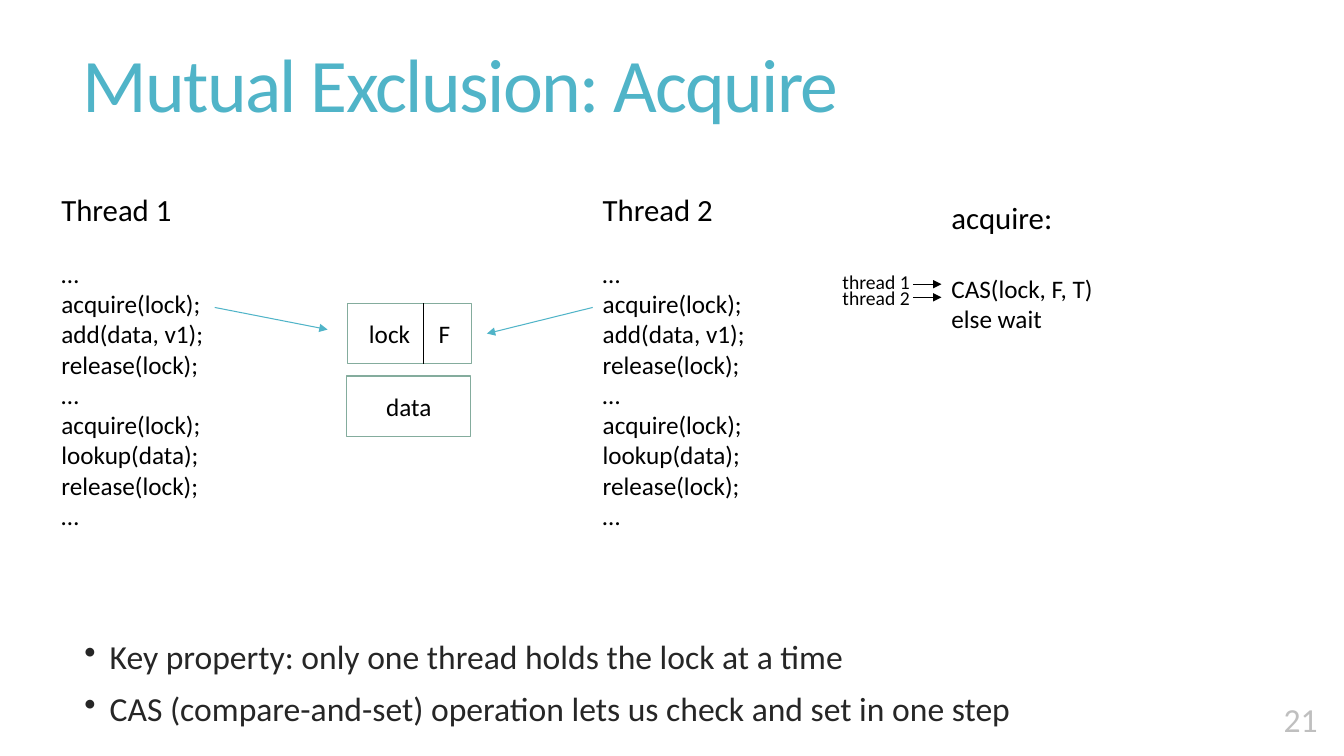
from lxml import etree
from pptx import Presentation, util as u
from pptx.dml import color
from pptx.enum import shapes, text
from pptx.oxml import ns

FONT = "Calibri"
BLACK, WHITE, TEAL, GREEN, DARK, GREY = "000000", "FFFFFF", "50B4C8", "84AC9D", "262626", "BFBFBF"
LEFT, CENTER, RIGHT = text.PP_ALIGN.LEFT, text.PP_ALIGN.CENTER, text.PP_ALIGN.RIGHT
TOP, MIDDLE, BOTTOM = text.MSO_ANCHOR.TOP, text.MSO_ANCHOR.MIDDLE, text.MSO_ANCHOR.BOTTOM

TITLE = "Mutual Exclusion: Acquire"
STEPS = ["…", "acquire(lock);", "add(data, v1);", "release(lock);",
         "…", "acquire(lock);", "lookup(data);", "release(lock);", "…"]
LISTINGS = [
    ("Thread 1", STEPS, 36.7, 132.5, 22),
    ("Thread 2", STEPS, 423.4, 132.5, 22),
    ("acquire:", ["CAS(lock, F, T)", "else wait"], 672.5, 138.2, 26.9),
]
CALLERS = [("thread 1", 189.4, 203), ("thread 2", 200.9, 212.4)]
BULLETS = ["Key property: only one thread holds the lock at a time",
           "CAS (compare-and-set) operation lets us check and set in one step"]
PAGE_NUMBER = "21"
LOCK = (248.4, 216.7, 88.6, 43.2)
DATA = (247.7, 268.6, 88.6, 43.2)
LOCK_LABELS = [("lock", 278.3), ("F", 317.4)]
LABEL_WIDTH = 36
DIVIDER = 302.4
LOCK_ARROWS = [(153.4, 219.6, 234, 235.4), (423.4, 219.6, 347.8, 238.3)]


def rgb(value):
    return color.RGBColor.from_string(value)


def write(shape, lines, size, fill=BLACK, anchor=TOP, **paragraph_format):
    frame = shape.text_frame
    frame.word_wrap = True
    frame.vertical_anchor = anchor
    frame.text = "\n".join(lines)
    for para in frame.paragraphs:
        for name, value in paragraph_format.items():
            setattr(para, name, value)
        for span in para.runs:
            for name, value in {"name": FONT, "size": u.Pt(size)}.items():
                setattr(span.font, name, value)
            span.font.color.rgb = rgb(fill)
    return frame


def add_text(page, place, lines, size, **options):
    return write(page.shapes.add_textbox(*map(u.Pt, place)), lines, size, **options)


def add_box(page, place):
    box = page.shapes.add_shape(shapes.MSO_SHAPE.RECTANGLE, *map(u.Pt, place))
    box.shadow.inherit = False
    box.fill.solid()
    box.fill.fore_color.rgb = rgb(WHITE)
    box.line.color.rgb = rgb(GREEN)
    box.line.width = u.Pt(1)
    return box


def add_line(page, ends, stroke, arrow=True):
    line = page.shapes.add_connector(shapes.MSO_CONNECTOR.STRAIGHT, *map(u.Pt, ends))
    line.line.color.rgb = rgb(stroke)
    line.line.width = u.Pt(0.75)
    if arrow:
        etree.SubElement(line.line._get_or_add_ln(), ns.qn("a:tailEnd"), type="triangle")
    etree.SubElement(line._element.spPr, ns.qn("a:effectLst"))


def add_bullets(page):
    frame = add_text(page, (53.3, 455, 846.7, 72), BULLETS, 24, fill=DARK,
                     line_spacing=0.85, space_before=u.Pt(13))
    frame.paragraphs[0].space_before = u.Pt(0)
    for para in frame.paragraphs:
        props = para._p.get_or_add_pPr()
        for name, points in {"marL": 18, "indent": -18}.items():
            props.set(name, str(u.Pt(points)))
        etree.SubElement(props, ns.qn("a:buChar"), char="•")


def main():
    deck = Presentation()
    deck.slide_width, deck.slide_height = u.Pt(960), u.Pt(540)
    page = deck.slides.add_slide(deck.slide_layouts[6])

    title = add_text(page, (51.8, -1.4, 848.2, 130.3), [TITLE], 54, fill=TEAL,
                     anchor=MIDDLE, line_spacing=0.85)
    title.paragraphs[0].runs[0]._r.get_or_add_rPr().set("spc", "-120")

    for heading, steps, left, top, gap in LISTINGS:
        frame = add_text(page, (left, top, 209.5, 252 if len(steps) > 2 else 104.4),
                         [heading, *steps], 18, alignment=LEFT)
        frame.paragraphs[0].runs[0].font.size = u.Pt(22)
        frame.paragraphs[1].space_before = u.Pt(gap)

    for caller, top, arrow_y in CALLERS:
        add_text(page, (594.7, top, 84.2, 24.5), [caller], 14)
        add_line(page, (652.3, arrow_y, 672.5, arrow_y), BLACK)

    write(add_box(page, DATA), ["data"], 18, anchor=MIDDLE, alignment=CENTER)
    add_box(page, LOCK)
    lock_top, lock_height = LOCK[1], LOCK[3]
    for label, middle in LOCK_LABELS:
        frame = add_text(page, (middle - LABEL_WIDTH / 2, lock_top, LABEL_WIDTH, lock_height),
                         [label], 18, anchor=MIDDLE, alignment=CENTER)
        frame.margin_left = frame.margin_right = 0
    add_line(page, (DIVIDER, lock_top + lock_height, DIVIDER, lock_top), BLACK, arrow=False)
    for ends in LOCK_ARROWS:
        add_line(page, ends, TEAL)

    add_bullets(page)
    add_text(page, (787, 481.7, 161.3, 49.7), [PAGE_NUMBER], 24, fill=GREY,
             anchor=BOTTOM, alignment=RIGHT)
    deck.save("out.pptx")


if __name__ == "__main__":
    main()
